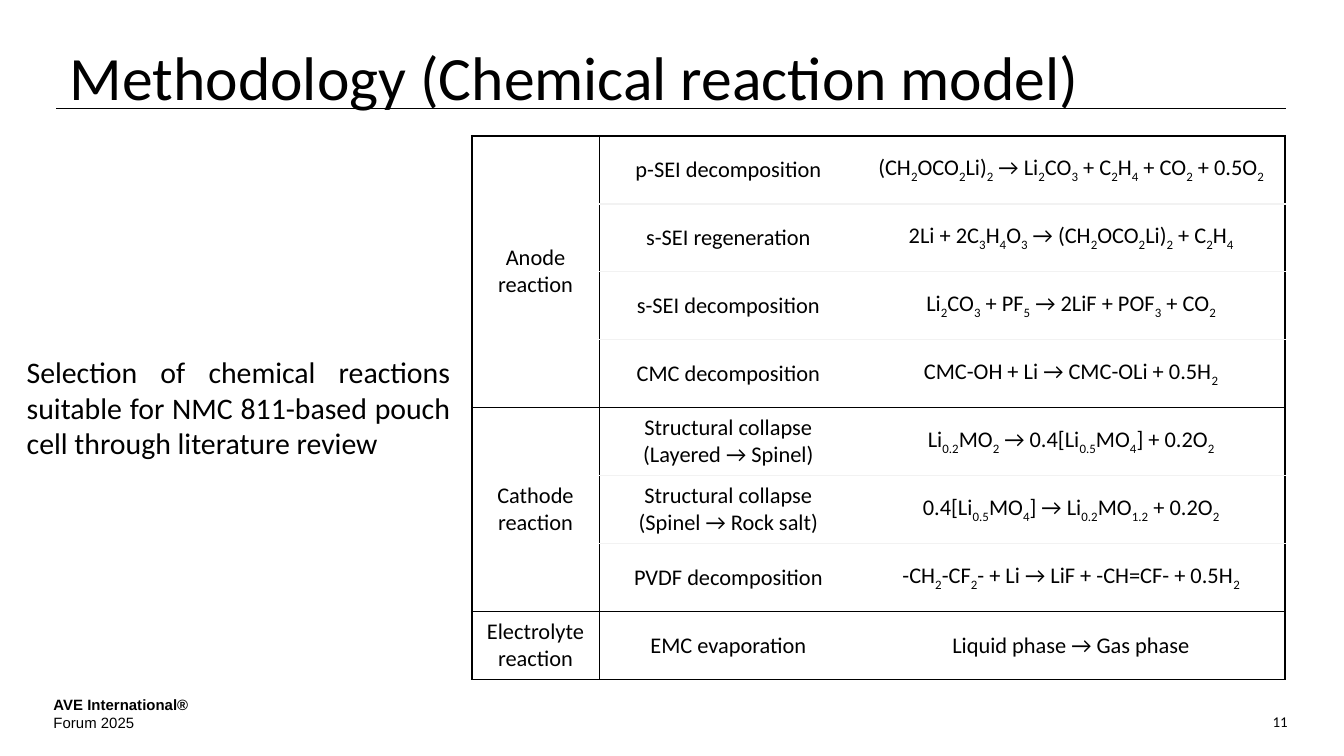
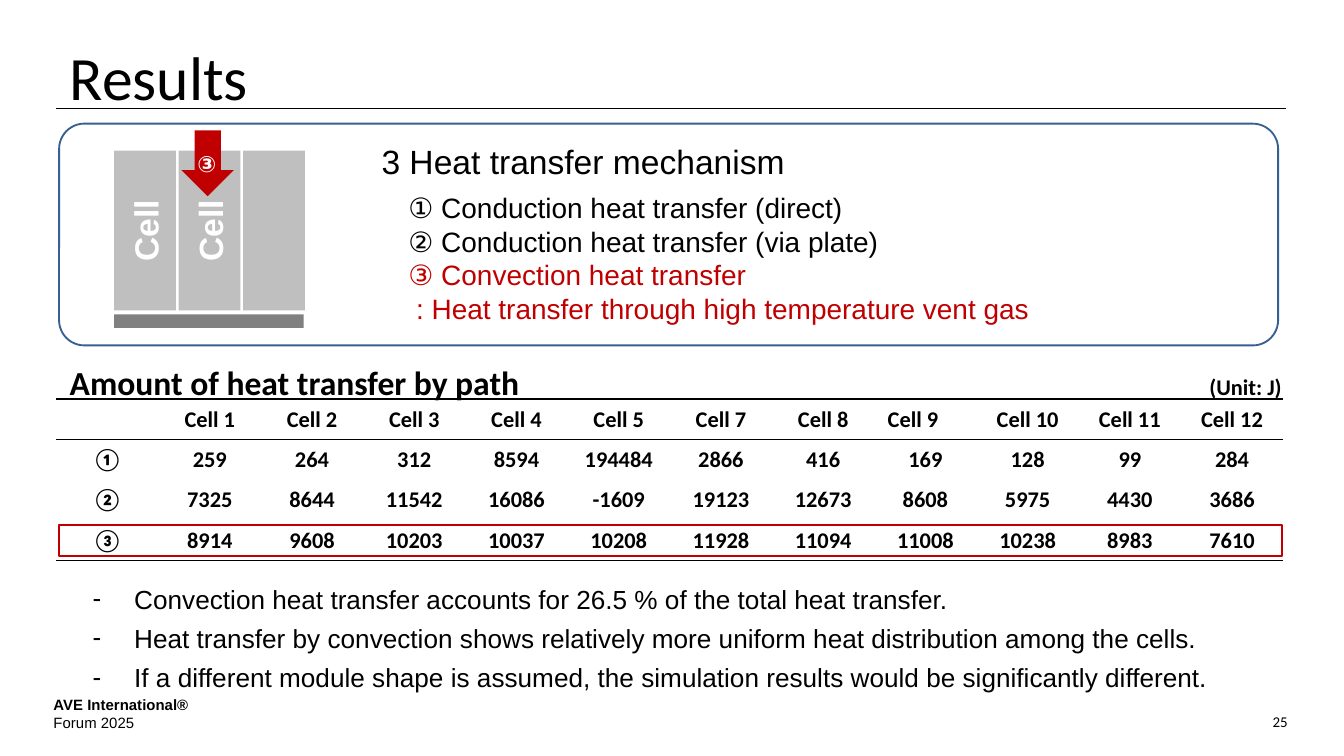
import pptx
import pptx.dml.color
import pptx.enum.shapes
import pptx.enum.text
import pptx.oxml
import pptx.oxml.ns
import pptx.util
from lxml import etree

Inches = pptx.util.Inches
Pt = pptx.util.Pt
RGBColor = pptx.dml.color.RGBColor
ALIGN = pptx.enum.text.PP_ALIGN
ANCHOR = pptx.enum.text.MSO_ANCHOR
SHAPE = pptx.enum.shapes.MSO_SHAPE
qn = pptx.oxml.ns.qn

BLACK = RGBColor(0x00, 0x00, 0x00)
WHITE = RGBColor(0xFF, 0xFF, 0xFF)
PALE_GREY = RGBColor(0xF2, 0xF2, 0xF2)
CELL_GREY = RGBColor(0xBF, 0xBF, 0xBF)
PLATE_GREY = RGBColor(0x80, 0x80, 0x80)
RED = RGBColor(0xC0, 0x00, 0x00)
BLUE = RGBColor(0x37, 0x60, 0x92)


def write(frame, texts, size, font="Calibri", bold=False, color=BLACK,
          align=ALIGN.LEFT, spacing=None, wrap=True):
    frame.word_wrap = wrap
    for index, text in enumerate(texts):
        paragraph = frame.add_paragraph() if index else frame.paragraphs[0]
        paragraph.alignment = align
        paragraph.line_spacing = spacing
        paragraph.font.size = Pt(size)
        paragraph.font.name = font
        paragraph.font.bold = bold
        paragraph.font.color.rgb = color
        if "_" not in text:
            paragraph.text = text
            continue
        for position, part in enumerate(text.split("_")):
            if part:
                run = paragraph.add_run()
                run.text = part
                if position % 2:
                    run.font._element.set("baseline", "-25000")


def style_cell(cell, borders):
    cell.vertical_anchor = ANCHOR.MIDDLE
    cell.fill.background()
    properties = cell._tc.get_or_add_tcPr()
    for index, side in enumerate("LRTB"):
        line = etree.Element(qn(f"a:ln{side}"), w=str(Pt(1)))
        color = borders.get(side)
        if color is None:
            etree.SubElement(line, qn("a:noFill"))
        else:
            fill = etree.SubElement(line, qn("a:solidFill"))
            etree.SubElement(fill, qn("a:srgbClr"), val=str(color))
        properties.insert(index, line)


presentation = pptx.Presentation()
presentation.slide_width = Inches(10)
presentation.slide_height = Inches(10 * 9 / 16)

slides = []
for title_text, number in (("Methodology (Chemical reaction model)", "11"), ("Results", "25")):
    slide = presentation.slides.add_slide(presentation.slide_layouts[5])
    slides.append(slide)
    title = slide.shapes.title
    title.left, title.top = Inches(0.42), Inches(0.3)
    title.width, title.height = Inches(9.15), Inches(0.44)
    title.text_frame.auto_size = pptx.enum.text.MSO_AUTO_SIZE.NONE
    title.text_frame.vertical_anchor = ANCHOR.TOP
    write(title.text_frame, [title_text], 33, spacing=0.9)

    rule = slide.shapes.add_connector(
        pptx.enum.shapes.MSO_CONNECTOR.STRAIGHT,
        Inches(0.42), Inches(0.81), Inches(9.57), Inches(0.81))
    rule.line.color.rgb = BLACK
    rule.line.width = Pt(0.5)
    etree.SubElement(rule._element.spPr, qn("a:effectLst"))

    footer = slide.shapes.add_textbox(Inches(0.3), Inches(5.13), Inches(2.87), Inches(0.37))
    write(footer.text_frame, ["AVE International®", "Forum 2025"], 8, "Arial")
    footer.text_frame.paragraphs[0].font.bold = True
    page = slide.shapes.add_textbox(Inches(7.53), Inches(5.25), Inches(2.15), Inches(0.24))
    write(page.text_frame, [number], 8, align=ALIGN.RIGHT)

methodology, results = slides

reaction_groups = [
    ("Anode\vreaction", [
        ("p-SEI decomposition", "(CH_2_OCO_2_Li)_2_ → Li_2_CO_3_ + C_2_H_4_ + CO_2_ + 0.5O_2_"),
        ("s-SEI regeneration", "2Li + 2C_3_H_4_O_3_ → (CH_2_OCO_2_Li)_2_ + C_2_H_4_"),
        ("s-SEI decomposition", "Li_2_CO_3_ + PF_5_ → 2LiF + POF_3_ + CO_2_"),
        ("CMC decomposition", "CMC-OH + Li → CMC-OLi + 0.5H_2_"),
    ]),
    ("Cathode\vreaction", [
        ("Structural collapse\v(Layered → Spinel)", "Li_0.2_MO_2_ → 0.4[Li_0.5_MO_4_] + 0.2O_2_"),
        ("Structural collapse\v(Spinel → Rock salt)", "0.4[Li_0.5_MO_4_] → Li_0.2_MO_1.2_ + 0.2O_2_"),
        ("PVDF decomposition", "-CH_2_-CF_2_- + Li → LiF + -CH=CF- + 0.5H_2_"),
    ]),
    ("Electrolyte reaction", [("EMC evaporation", "Liquid phase → Gas phase")]),
]
reaction_table = methodology.shapes.add_table(
    8, 3, Inches(3.51), Inches(1.01), Inches(6.06), Inches(4.05)).table
reaction_table.first_row = reaction_table.horz_banding = False
for column, width in zip(reaction_table.columns, (0.95, 1.92, 3.18)):
    column.width = Inches(width)
for row in reaction_table.rows:
    row.height = Inches(4.05 / 8)

first_row = 0
for group, reactions in reaction_groups:
    last_row = first_row + len(reactions) - 1
    for row_index, texts in enumerate(reactions, first_row):
        top = BLACK if row_index == first_row else PALE_GREY
        bottom = BLACK if row_index == last_row else PALE_GREY
        group_cell, name_cell, formula_cell = (reaction_table.cell(row_index, i) for i in range(3))
        style_cell(group_cell, dict.fromkeys("LRTB", BLACK))
        style_cell(name_cell, {"L": BLACK, "T": top, "B": bottom})
        style_cell(formula_cell, {"R": BLACK, "T": top, "B": bottom})
        for cell, text in zip((name_cell, formula_cell), texts):
            write(cell.text_frame, [text], 12, align=ALIGN.CENTER)
    heading = reaction_table.cell(first_row, 0)
    write(heading.text_frame, [group], 12, align=ALIGN.CENTER)
    if last_row > first_row:
        heading.merge(reaction_table.cell(last_row, 0))
    first_row = last_row + 1

selection = methodology.shapes.add_textbox(Inches(0.1), Inches(2.58), Inches(3.35), Inches(0.91))
write(selection.text_frame,
      ["Selection of chemical reactions suitable for NMC 811-based pouch cell through literature review"],
      16, align=ALIGN.JUSTIFY)

heat_rows = [
    ["", *(f"Cell {n}" for n in (1, 2, 3, 4, 5, 7, 8, 9, 10, 11, 12))],
    ["①", 259, 264, 312, 8594, 194484, 2866, 416, 169, 128, 99, 284],
    ["②", 7325, 8644, 11542, 16086, -1609, 19123, 12673, 8608, 5975, 4430, 3686],
    ["③", 8914, 9608, 10203, 10037, 10208, 11928, 11094, 11008, 10238, 8983, 7610],
]
row_borders = [{"T": BLACK, "B": BLACK}, {"T": BLACK}, {}, {"B": BLACK}]
heat_table = results.shapes.add_table(
    4, 12, Inches(0.42), Inches(2.97), Inches(9.13), Inches(1.2)).table
heat_table.first_row = heat_table.horz_banding = False
for column in heat_table.columns:
    column.width = Inches(9.13 / 12)
for row_index, values in enumerate(heat_rows):
    heat_table.rows[row_index].height = Inches(0.3)
    for column_index, value in enumerate(values):
        cell = heat_table.cell(row_index, column_index)
        style_cell(cell, row_borders[row_index])
        align = ALIGN.LEFT if value == "Cell 9" else ALIGN.CENTER
        write(cell.text_frame, [str(value)], 12, bold=True, align=align)
        if row_index == 3 and column_index:
            cell.margin_left = cell.margin_right = cell.margin_top = cell.margin_bottom = 0

for kind, left, top, width, height, fill, line, label in (
    (SHAPE.ROUNDED_RECTANGLE, 0.44, 0.92, 9.07, 1.65, None, BLUE, ""),
    (SHAPE.RECTANGLE, 0.85, 1.12, 0.46, 1.19, CELL_GREY, None, "Cell"),
    (SHAPE.RECTANGLE, 1.33, 1.12, 0.46, 1.19, CELL_GREY, None, "Cell"),
    (SHAPE.RECTANGLE, 1.81, 1.12, 0.46, 1.19, CELL_GREY, None, ""),
    (SHAPE.RECTANGLE, 0.85, 2.34, 1.41, 0.1, PLATE_GREY, None, ""),
    (SHAPE.RECTANGLE, 0.44, 3.91, 9.1, 0.23, None, RED, ""),
    (SHAPE.RIGHT_ARROW, 1.3, 1.02, 0.49, 0.39, RED, None, ""),
):
    shape = results.shapes.add_shape(kind, Inches(left), Inches(top), Inches(width), Inches(height))
    shape.shadow.inherit = False
    if kind == SHAPE.ROUNDED_RECTANGLE:
        shape.adjustments[0] = 0.114
    if kind == SHAPE.RIGHT_ARROW:
        shape.rotation = 90
    if fill is None:
        shape.fill.background()
    else:
        shape.fill.solid()
        shape.fill.fore_color.rgb = fill
    if line is None:
        shape.line.fill.background()
    else:
        shape.line.color.rgb = line
        shape.line.width = Pt(1)
    if label:
        shape.text_frame._txBody.bodyPr.set("vert", "vert270")
        shape.text_frame.vertical_anchor = ANCHOR.MIDDLE
        write(shape.text_frame, [label], 18, "Arial", True, WHITE, ALIGN.CENTER)

for left, top, width, height, text, size, font, color in (
    (0.42, 2.49, 3.58, 0.51, "Amount of heat transfer by path", 18, "Calibri", BLACK),
    (8.9, 2.63, 0.75, 0.37, "(Unit: J)", 12, "Calibri", BLACK),
    (1.37, 0.97, 0.37, 0.37, "③", 12, "Arial", WHITE),
):
    label_box = results.shapes.add_textbox(Inches(left), Inches(top), Inches(width), Inches(height))
    write(label_box.text_frame, [text], size, font, True, color, spacing=1.5, wrap=False)

mechanism = results.shapes.add_textbox(Inches(2.74), Inches(1), Inches(6.32), Inches(1.48))
write(mechanism.text_frame, ["3 Heat transfer mechanism", ""], 18, "Arial")
heading_paragraph, path_paragraph = mechanism.text_frame.paragraphs
heading_paragraph.space_after = path_paragraph.space_after = Pt(5)
path_paragraph.font.size = Pt(15)
path_paragraph._p.get_or_add_pPr().set("marL", str(Inches(0.2)))
for index, (text, color) in enumerate((
    ("① Conduction heat transfer (direct)", BLACK),
    ("② Conduction heat transfer (via plate)", BLACK),
    ("③ Convection heat transfer", RED),
    (" : Heat transfer through high temperature vent gas", RED),
)):
    if index:
        path_paragraph.add_line_break()
    run = path_paragraph.add_run()
    run.text = text
    run.font.color.rgb = color

findings = results.shapes.add_textbox(Inches(0.59), Inches(4.23), Inches(8.65), Inches(0.96))
write(findings.text_frame, [
    "Convection heat transfer accounts for 26.5 % of the total heat transfer.",
    "Heat transfer by convection shows relatively more uniform heat distribution among the cells.",
    "If a different module shape is assumed, the simulation results would be significantly different.",
], 14, "Arial", align=ALIGN.JUSTIFY, spacing=1.25, wrap=False)
for paragraph in findings.text_frame.paragraphs:
    properties = paragraph._p.get_or_add_pPr()
    properties.set("marL", str(Inches(0.31)))
    properties.set("indent", str(-Inches(0.31)))
    defaults = properties.find(qn("a:defRPr"))
    defaults.addprevious(etree.Element(qn("a:buFont"), typeface="Arial"))
    defaults.addprevious(etree.Element(qn("a:buChar"), char="-"))

presentation.save("out.pptx")
